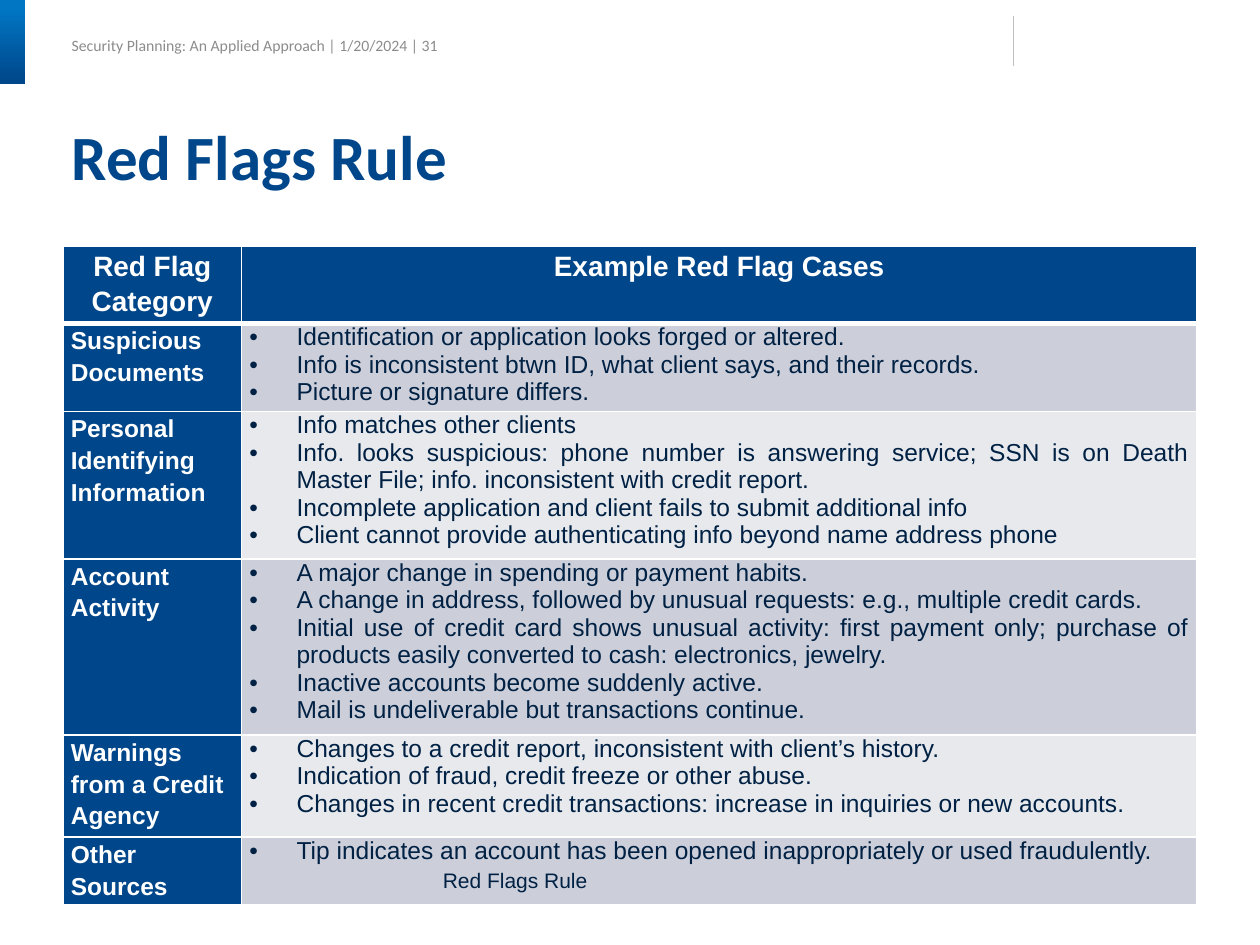
from lxml import etree
from pptx import Presentation
from pptx.dml.color import RGBColor
from pptx.enum.shapes import MSO_CONNECTOR, MSO_SHAPE
from pptx.enum.text import MSO_ANCHOR, MSO_AUTO_SIZE, PP_ALIGN
from pptx.oxml.ns import qn
from pptx.util import Pt

LEFT, CENTER, JUSTIFY = PP_ALIGN.LEFT, PP_ALIGN.CENTER, PP_ALIGN.JUSTIFY
TOP, MIDDLE = MSO_ANCHOR.TOP, MSO_ANCHOR.MIDDLE
NO_AUTOFIT = MSO_AUTO_SIZE.NONE
RECTANGLE, STRAIGHT = MSO_SHAPE.RECTANGLE, MSO_CONNECTOR.STRAIGHT

COLORS = {
    "navy": "00468A", "blue": "0176C3", "ink": "002143", "white": "FFFFFF",
    "gray": "8C8C8C", "rule": "BFBFBF", "band_dark": "CCCFDA", "band_light": "E7E9ED",
}
HEADINGS = ("Red Flag Category", "Example Red Flag Cases")
COLUMN_WIDTHS = (102, 546)
HEADER_HEIGHT = 44
# Category, row height, example cases
CATEGORIES = [
    ("Suspicious Documents", 50.4, [
        "Identification or application looks forged or altered.",
        "Info is inconsistent btwn ID, what client says, and their records.",
        "Picture or signature differs."]),
    ("Personal Identifying Information", 84.2, [
        "Info matches other clients",
        "Info. looks suspicious: phone number is answering service; SSN is on Death "
        "Master File; info. inconsistent with credit report.",
        "Incomplete application and client fails to submit additional info",
        "Client cannot provide authenticating info beyond name address phone"]),
    ("Account Activity", 100.8, [
        "A major change in spending or payment habits.",
        "A change in address, followed by unusual requests: e.g., multiple credit cards.",
        "Initial use of credit card shows unusual activity: first payment only; purchase of "
        "products easily converted to cash: electronics, jewelry.",
        "Inactive accounts become suddenly active.",
        "Mail is undeliverable but transactions continue."]),
    ("Warnings from a Credit Agency", 58.3, [
        "Changes to a credit report, inconsistent with client’s history.",
        "Indication of fraud, credit freeze or other abuse.",
        "Changes in recent credit transactions: increase in inquiries or new accounts."]),
    ("Other Sources", 38.9, [
        "Tip indicates an account has been opened inappropriately or used fraudulently."]),
]


def rgb(name):
    return RGBColor.from_string(COLORS[name])


class SlideBuilder:
    """Holds the fonts and the current slide; all lengths are in points."""

    heading_font, body_font = "Calibri", "Arial"
    bullet_indent = 27

    def __init__(self, slide):
        self.slide = slide

    def add_text(self, paragraph, text, size, color, font=None, bold=False, align=LEFT, spacing=1.0):
        paragraph.alignment = align
        paragraph.line_spacing = spacing
        run = paragraph.add_run()
        run.text = text
        run.font.name = font or self.body_font
        run.font.size = Pt(size)
        run.font.bold = bold
        run.font.color.rgb = rgb(color)

    def set_frame(self, frame, insets, anchor=TOP, wrap=True):
        frame.margin_left, frame.margin_top, frame.margin_right, frame.margin_bottom = map(Pt, insets)
        frame.vertical_anchor = anchor
        frame.word_wrap = wrap
        frame.auto_size = NO_AUTOFIT

    def title(self, text, left, top, width, height):
        title = self.slide.shapes.title
        title.left, title.top, title.width, title.height = map(Pt, (left, top, width, height))
        self.set_frame(title.text_frame, (0, 0, 0, 0))
        self.add_text(title.text_frame.paragraphs[0], text, 36, "navy",
                      self.heading_font, bold=True, spacing=0.9)

    def label(self, text, box, size, color, font, insets=(7.2, 3.6, 7.2, 3.6), **frame_style):
        label = self.slide.shapes.add_textbox(*map(Pt, box))
        self.set_frame(label.text_frame, insets, **frame_style)
        self.add_text(label.text_frame.paragraphs[0], text, size, color, font)

    def gradient_bar(self, left, top, width, height):
        bar = self.slide.shapes.add_shape(RECTANGLE, *map(Pt, (left, top, width, height)))
        bar.shadow.inherit = False
        bar.line.fill.background()
        bar.fill.gradient()
        bar.fill.gradient_angle = 270
        for stop, position, color in zip(bar.fill.gradient_stops, (0.1, 1), ("blue", "navy")):
            stop.position = position
            stop.color.rgb = rgb(color)

    def vertical_rule(self, x, top, bottom):
        rule = self.slide.shapes.add_connector(STRAIGHT, *map(Pt, (x, top, x, bottom)))
        rule.line.color.rgb = rgb("rule")
        rule.line.width = Pt(0.75)
        etree.SubElement(rule._element.spPr, qn("a:effectLst"))

    def bullet(self, paragraph):
        properties = paragraph._p.get_or_add_pPr()
        properties.set("marL", str(Pt(self.bullet_indent)))
        properties.set("indent", str(-Pt(self.bullet_indent)))
        etree.SubElement(properties, qn("a:buFont"), typeface=self.body_font)
        etree.SubElement(properties, qn("a:buChar"), char="•")

    def borders(self, cell, top, bottom):
        properties = cell._tc.get_or_add_tcPr()
        for side, width in (("L", 1), ("R", 1), ("T", top), ("B", bottom)):
            line = etree.SubElement(properties, qn(f"a:ln{side}"), w=str(Pt(width)))
            fill = etree.SubElement(line, qn("a:solidFill"))
            etree.SubElement(fill, qn("a:srgbClr"), val=COLORS["white"])

    def cell(self, cell, texts, fill, size=14, color="white", bold=True, align=LEFT,
             spacing=1.15, bulleted=False, top=1, bottom=1):
        self.borders(cell, top, bottom)
        cell.fill.solid()
        cell.fill.fore_color.rgb = rgb(fill)
        cell.margin_left = cell.margin_right = Pt(4.5)
        cell.margin_top = cell.margin_bottom = 0
        frame = cell.text_frame
        for index, text in enumerate(texts):
            paragraph = frame.add_paragraph() if index else frame.paragraphs[0]
            if bulleted:
                self.bullet(paragraph)
            self.add_text(paragraph, text, size, color, bold=bold, align=align, spacing=spacing)

    def category_table(self, left, top):
        heights = [HEADER_HEIGHT] + [height for _, height, _ in CATEGORIES]
        table = self.slide.shapes.add_table(
            len(heights), len(COLUMN_WIDTHS), Pt(left), Pt(top),
            Pt(sum(COLUMN_WIDTHS)), Pt(sum(heights))).table
        for column, width in zip(table.columns, COLUMN_WIDTHS):
            column.width = Pt(width)
        for row, height in zip(table.rows, heights):
            row.height = Pt(height)
        for column, heading in enumerate(HEADINGS):
            self.cell(table.cell(0, column), [heading], "navy", size=16, align=CENTER, bottom=3)
        for row, (category, _, cases) in enumerate(CATEGORIES, start=1):
            top_border = 3 if row == 1 else 1
            band = "band_dark" if row % 2 else "band_light"
            self.cell(table.cell(row, 0), [category], "navy", top=top_border)
            self.cell(table.cell(row, 1), cases, band, color="ink", bold=False, align=JUSTIFY,
                      spacing=1.0, bulleted=True, top=top_border)


def main():
    presentation = Presentation()
    presentation.slide_width, presentation.slide_height = Pt(720), Pt(540)
    title_only = presentation.slide_layouts[5]
    builder = SlideBuilder(presentation.slides.add_slide(title_only))

    builder.label("Security Planning: An Applied Approach | 1/20/2024 | 31", (41, 16.5, 204.5, 16.5),
                  9, "gray", builder.heading_font, insets=(0, 2, 0, 0), anchor=MIDDLE, wrap=False)
    builder.gradient_bar(0, 0, 14.4, 48)
    builder.vertical_rule(579, 9.4, 37.5)
    builder.title("Red Flags Rule", 41, 72, 642, 39.6)
    builder.category_table(36, 140.7)
    builder.label("Red Flags Rule", (246, 492, 228, 36), 12, "ink", builder.body_font)

    presentation.save("out.pptx")


if __name__ == "__main__":
    main()
